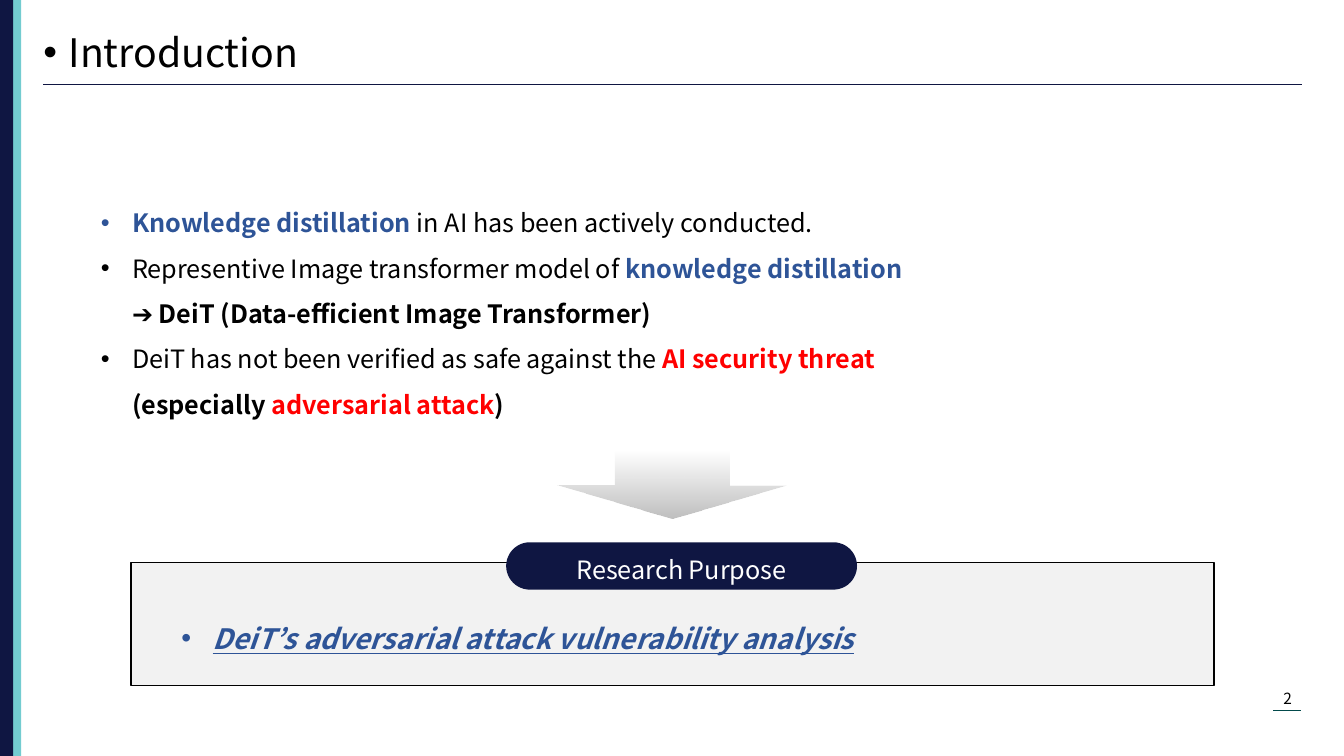
from dataclasses import dataclass

from lxml import etree
from pptx import Presentation
from pptx import util as u
from pptx.dml.color import RGBColor
from pptx.enum import shapes, text
from pptx.oxml.ns import qn


@dataclass(frozen=True)
class Theme:
    font: str = "Noto Sans CJK KR"
    navy: str = "0F1642"
    teal: str = "73CCD0"
    dark_teal: str = "024A4B"
    blue: str = "2E5497"
    red: str = "FF0000"
    black: str = "000000"
    white: str = "FFFFFF"
    panel: str = "F2F2F2"
    arrow: str = "BFBFBF"
    title_size: int = 28
    purpose_size: int = 20
    body_size: int = 18
    number_size: int = 11


class SlideBuilder:
    def __init__(self, page, theme):
        self.page = page
        self.theme = theme

    def color(self, name):
        return RGBColor.from_string(getattr(self.theme, name))

    def shape(self, kind, area, fill, line=None, parent=None):
        box = (parent or self.page).shapes.add_shape(kind, *map(u.Inches, area))
        box.shadow.inherit = False
        box.fill.solid()
        box.fill.fore_color.rgb = self.color(fill)
        if line:
            box.line.color.rgb = self.color(line)
            box.line.width = u.Pt(1)
        else:
            box.line.fill.background()
        return box

    def fading_arrow(self, area, color):
        arrow = self.shape(shapes.MSO_SHAPE.DOWN_ARROW, area, color)
        arrow.fill.gradient()
        arrow.fill.gradient_angle = 90
        for stop in arrow.fill.gradient_stops:
            stop.color.rgb = self.color(color)
        faded = arrow._element.spPr.findall(".//" + qn("a:srgbClr"))[-1]
        etree.SubElement(faded, qn("a:alpha"), val="0")

    def line(self, left, right, top, color, width):
        rule = self.page.shapes.add_connector(
            shapes.MSO_CONNECTOR.STRAIGHT,
            u.Inches(left), u.Inches(top), u.Inches(right), u.Inches(top))
        rule.line.color.rgb = self.color(color)
        rule.line.width = u.Pt(width)
        etree.SubElement(rule._element.spPr, qn("a:effectLst"))

    def text_box(self, area, parent=None):
        return (parent or self.page).shapes.add_textbox(*map(u.Inches, area))

    def placeholder(self, index, area):
        box = self.page.placeholders[index]
        box.left, box.top, box.width, box.height = map(u.Inches, area)
        return box

    def set_text(self, box, paragraphs, size, color="black", align=text.PP_ALIGN.LEFT,
                 spacing=1.0, before=0, indent=0):
        frame = box.text_frame
        frame.word_wrap = True
        frame.auto_size = text.MSO_AUTO_SIZE.NONE
        frame.vertical_anchor = text.MSO_ANCHOR.TOP
        for number, lines in enumerate(paragraphs):
            para = frame.add_paragraph() if number else frame.paragraphs[0]
            para.alignment = align
            para.line_spacing = spacing
            para.space_before = u.Pt(before)
            if indent:
                self.bullet(para, indent)
            para.font.name = self.theme.font
            para.font.size = u.Pt(size)
            para.font.color.rgb = self.color(color)
            for row, spans in enumerate(lines):
                if row:
                    para.add_line_break()
                for words, *style in spans:
                    span = para.add_run()
                    span.text = words
                    if style:
                        span.font.bold = True
                        span.font.color.rgb = self.color(style[0])
        return frame

    def bullet(self, para, indent):
        settings = para._p.get_or_add_pPr()
        settings.set("marL", str(u.Inches(indent)))
        settings.set("indent", str(-u.Inches(indent)))
        etree.SubElement(settings, qn("a:buFont"), typeface="Arial")
        etree.SubElement(settings, qn("a:buChar"), char="•")


def main():
    deck = Presentation()
    deck.slide_width, deck.slide_height = u.Inches(13.33), u.Inches(7.5)
    page = deck.slides.add_slide(deck.slide_layouts[1])
    theme = Theme()
    slide = SlideBuilder(page, theme)
    rectangle = shapes.MSO_SHAPE.RECTANGLE
    center = text.PP_ALIGN.CENTER

    slide.shape(rectangle, (0.08, 0, 0.13, 7.5), "teal")
    slide.shape(rectangle, (0, 0, 0.13, 7.5), "navy")
    slide.line(0.43, 12.91, 0.84, "navy", 1)
    slide.set_text(slide.text_box((12.43, 6.79, 0.68, 0.29)), [[[("2",)]]],
                   theme.number_size, align=center)
    slide.line(12.63, 12.9, 7.05, "dark_teal", 0.5)

    slide.set_text(slide.placeholder(0, (0.33, 0.28, 4.47, 0.6)), [[[("Introduction",)]]],
                   theme.title_size, spacing=0.9, before=10, indent=0.25)

    findings = [
        [[("Knowledge distillation ", "blue"), ("in AI has been actively conducted.",)]],
        [[("Representive Image transformer model of ",), ("knowledge distillation", "blue")],
         [("➔ DeiT (Data-efficient Image Transformer)", "black")]],
        [[("DeiT has not been verified as safe against the ",), ("AI security threat", "red")],
         [("(especially ", "black"), ("adversarial attack", "red"), (")", "black")]],
    ]
    slide.set_text(slide.placeholder(1, (0.9, 1.86, 11.14, 2.31)), findings,
                   theme.body_size, spacing=1.5, indent=0.31)

    slide.fading_arrow((5.53, 4.48, 2.27, 0.66), "arrow")

    slide.shape(rectangle, (1.3, 5.58, 10.74, 1.22), "panel", line="black")
    label = page.shapes.add_group_shape()
    pill = slide.shape(shapes.MSO_SHAPE.ROUNDED_RECTANGLE, (5.02, 5.38, 3.48, 0.47),
                       "navy", parent=label)
    pill.adjustments[0] = 0.5
    slide.set_text(slide.text_box((5.55, 5.45, 2.42, 0.71), label),
                   [[[("Research Purpose",)]]], theme.body_size, color="white", align=center)

    purpose = [[[("DeiT’s adversarial attack vulnerability analysis", "blue")]]]
    frame = slide.set_text(slide.text_box((1.7, 5.95, 7.25, 0.54)), purpose,
                           theme.purpose_size, color="blue", spacing=1.5, indent=0.31)
    frame.paragraphs[0].font.italic = True
    frame.paragraphs[0].font.underline = True

    deck.save("out.pptx")


if __name__ == "__main__":
    main()
